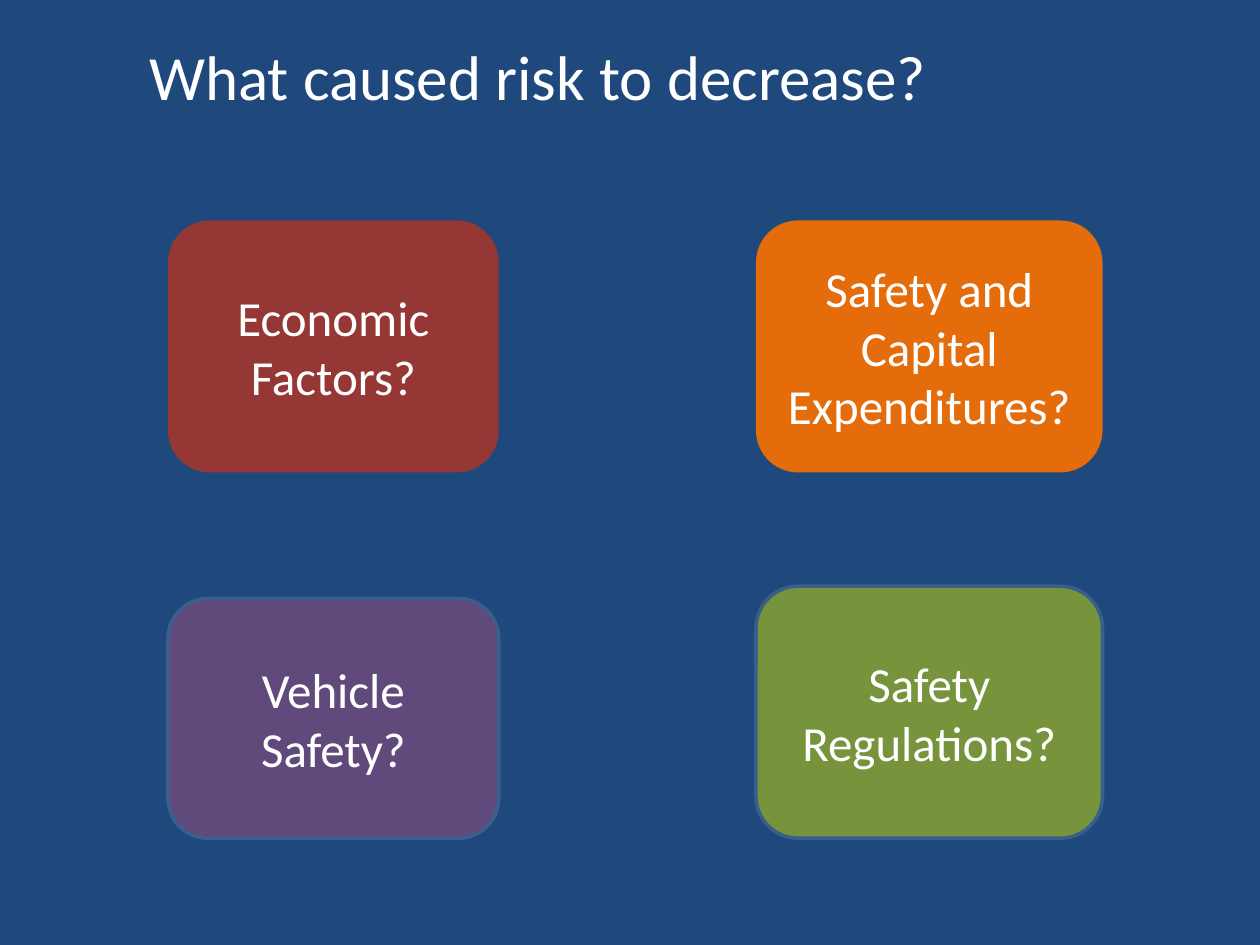
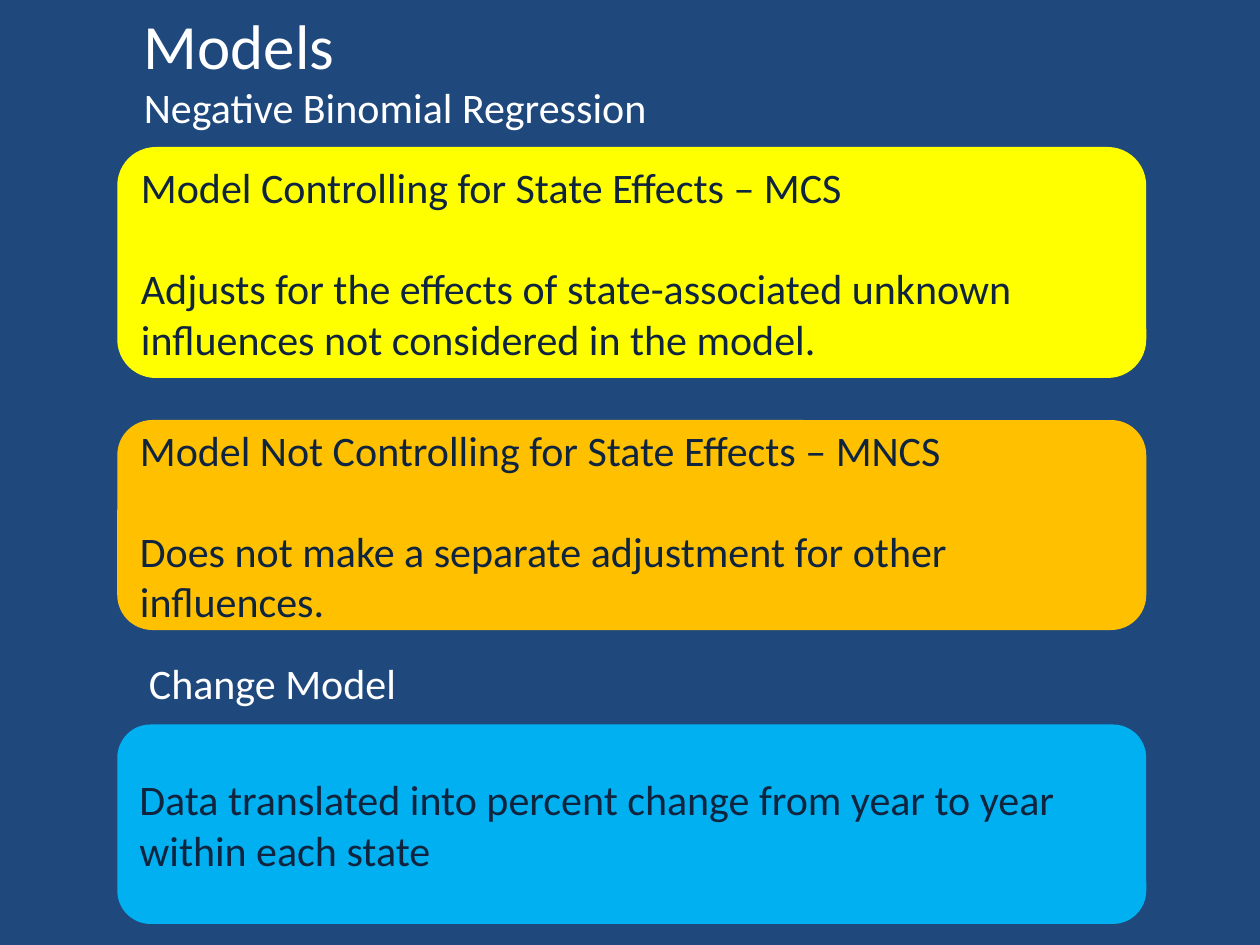
from pptx import Presentation
from pptx.dml.color import RGBColor as RGB
from pptx.enum.shapes import MSO_SHAPE as Kind
from pptx.enum.text import MSO_ANCHOR as Anchor, MSO_AUTO_SIZE as Fit, PP_ALIGN as Align
from pptx.util import Pt

NAVY = RGB(0x1F, 0x49, 0x7D)
WHITE = RGB(0xFF, 0xFF, 0xFF)
INK = RGB(0x0F, 0x24, 0x3E)
EDGE = RGB(0x3A, 0x5F, 0x8C)
RED = RGB(0x95, 0x37, 0x35)
ORANGE = RGB(0xE4, 0x6C, 0x0A)
PURPLE = RGB(0x60, 0x4A, 0x7B)
GREEN = RGB(0x77, 0x93, 0x3C)
YELLOW = RGB(0xFF, 0xFF, 0x00)
AMBER = RGB(0xFF, 0xC0, 0x00)
SKY = RGB(0x00, 0xB0, 0xF0)


def write(shape, text, sizes=(24,), color=WHITE, align=Align.LEFT,
          anchor=Anchor.TOP, gap=0):
    """Fill a shape with one paragraph per line; the last size repeats."""
    frame = shape.text_frame
    frame.word_wrap = True
    frame.auto_size = Fit.NONE
    frame.vertical_anchor = anchor
    frame.text = text
    for i, para in enumerate(frame.paragraphs):
        para.alignment = align
        para.space_before = Pt(gap if i else 0)
        font = para.font
        font.name = "Calibri"
        font.size = Pt(sizes[min(i, len(sizes) - 1)])
        font.color.rgb = color


def card(slide, left, top, width, height, fill, edge=None):
    """Add a flat rounded box."""
    box = slide.shapes.add_shape(Kind.ROUNDED_RECTANGLE, Pt(left), Pt(top),
                                 Pt(width), Pt(height))
    box.shadow.inherit = False
    box.fill.solid()
    box.fill.fore_color.rgb = fill
    if edge:
        box.line.color.rgb = edge
        box.line.width = Pt(2)
    else:
        box.line.fill.background()
    return box


# Shared page and background
prs = Presentation()
prs.slide_width, prs.slide_height = Pt(720), Pt(540)
back = prs.slide_master.background.fill
back.solid()
back.fore_color.rgb = NAVY

# Slides with their titles
heads = [
    ("What caused risk to decrease?", 78, 18, 51),
    ("Models\nNegative Binomial Regression", 75, 0, 80),
]
slides = []
for text, left, top, height in heads:
    slide = prs.slides.add_slide(prs.slide_layouts[5])
    title = slide.shapes.title
    title.left, title.top = Pt(left), Pt(top)
    title.width, title.height = Pt(570), Pt(height)
    write(title, text, sizes=(36, 24))
    slides.append(slide)
causes, models = slides

# Four possible causes, in two columns
cols = [(96, 189), (432, 198)]
cells = [
    (0, 126, 144, RED, None, "Economic\nFactors?"),
    (1, 126, 144, ORANGE, None, "Safety and Capital Expenditures?"),
    (0, 342, 137, PURPLE, EDGE, "Vehicle\nSafety?"),
    (1, 335, 144, GREEN, EDGE, "Safety Regulations?"),
]
for col, top, height, fill, edge, text in cells:
    left, width = cols[col]
    box = card(causes, left, top, width, height, fill, edge)
    write(box, text, sizes=(28,), align=Align.CENTER, anchor=Anchor.MIDDLE)

# Model boxes, stacked at full width
rows = [
    (84, 132, YELLOW, "Model Controlling for State Effects – MCS\n"
     "Adjusts for the effects of state-associated unknown influences "
     "not considered in the model."),
    (240, 120, AMBER, "Model Not Controlling for State Effects – MNCS\n"
     "Does not make a separate adjustment for other influences."),
    (414, 114, SKY, "Data translated into percent change from year to year "
     "within each state"),
]
for top, height, fill, text in rows:
    box = card(models, 67, top, 588, height, fill)
    write(box, text, color=INK, anchor=Anchor.MIDDLE, gap=29)

# Heading of the last model
label = models.shapes.add_textbox(Pt(78), Pt(372), Pt(570), Pt(36))
write(label, "Change Model")

prs.save("out.pptx")
